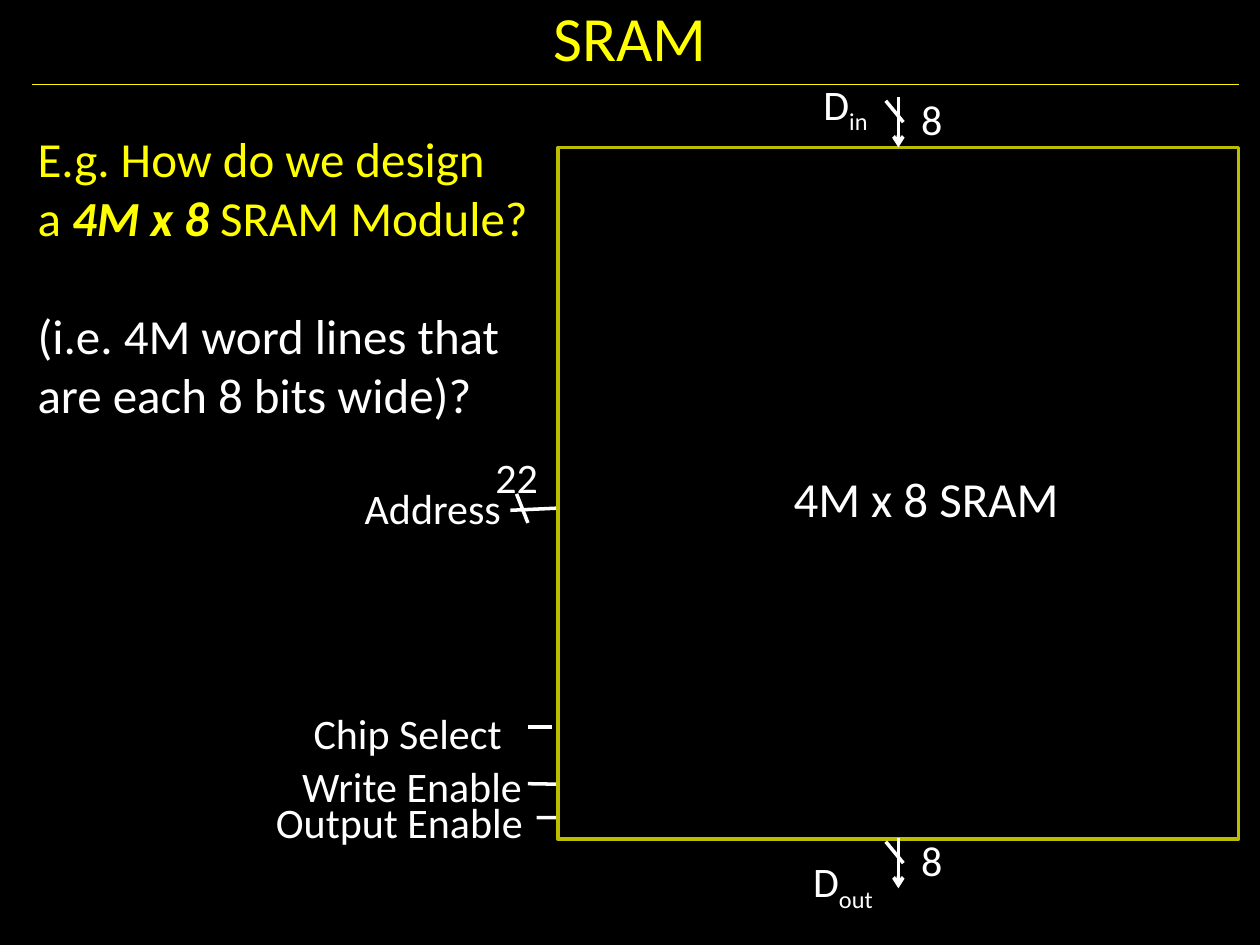
"""Build a slide showing the ports of a 4M x 8 SRAM module."""
from lxml.etree import SubElement
from pptx import Presentation
from pptx.dml.color import RGBColor
from pptx.enum.shapes import MSO_CONNECTOR as Connector, MSO_SHAPE as Shape
from pptx.enum.text import MSO_ANCHOR as Anchor, MSO_AUTO_SIZE as AutoSize, PP_ALIGN as Align
from pptx.oxml.ns import qn
from pptx.util import Inches, Pt

COLORS = {"background": "000000", "title": "FFFF00", "rule": "F9F900",
          "module": "BDBD00", "text": "FFFFFF"}
FONT = "Calibri"
TITLE = "SRAM"
MODULE_BOX = (4.43, 1.17, 5.4, 5.49)
MODULE_NAME = ("4M x 8 SRAM", (6.2, 3.67, 2.34, 0.57))
QUESTION_BOX = (0.2, 0.97, 4.14, 2.93)
QUESTION = [
    ("title", 0, [("E.g. How do we design", False)]),
    ("title", 0, [("a ", False), ("4M x 8", True), (" SRAM Module?", False)]),
    ("text", 34, [("(i.e. 4M word lines that", False)]),
    ("text", 0, [("are each 8 bits wide)?", False)]),
]
LABELS = [
    ("22", "", (3.83, 3.47, 0.54, 0.57)),
    ("Address", "", (2.79, 3.72, 1.29, 0.57)),
    ("D", "out", (6.33, 6.67, 0.72, 0.54)),
    ("D", "in", (6.42, 0.5, 0.58, 0.54)),
    ("Chip Select", "", (2.38, 5.5, 1.71, 0.54)),
    ("Write Enable", "", (2.29, 5.92, 1.96, 0.54)),
    ("Output Enable", "", (2.08, 6.21, 2.18, 0.57)),
]
INPUT_WIRES = [
    ((4.05, 4.05), (4.71, 4.02), "tailEnd"),
    ((4.1, 3.92), (4.19, 4.15), None),
    ((5.96, 6.25), (4.19, 6.22), None),
    ((6.34, 6.48), (4.26, 6.49), None),
    ((4.38, 5.77), (4.19, 5.77), None),
]
DATA_BUS_TOPS = (0.77, 6.65)
BUS_X = 7.13
BUS_WIDTH = "8"


def style(run, size, color="text", emphasis=None):
    font = run.font
    font.name, font.size = FONT, Pt(size)
    font.bold = font.italic = emphasis
    font.color.rgb = RGBColor.from_string(COLORS[color])


def add_line(slide, start, end, arrow=None, color="text", width=2):
    points = [Inches(value) for value in (*start, *end)]
    line = slide.shapes.add_connector(Connector.STRAIGHT, *points)
    line.line.color.rgb = RGBColor.from_string(COLORS[color])
    line.line.width = Pt(width)
    if arrow:
        SubElement(line.line._get_or_add_ln(), qn(f"a:{arrow}"), type="arrow")
    SubElement(line._element.spPr, qn("a:effectLst"))


def add_text_frame(slide, box):
    frame = slide.shapes.add_textbox(*map(Inches, box)).text_frame
    frame.word_wrap = False
    frame.auto_size = AutoSize.SHAPE_TO_FIT_TEXT
    return frame


def add_label(slide, text, subscript, box):
    paragraph = add_text_frame(slide, box).paragraphs[0]
    paragraph.alignment = Align.CENTER
    paragraph.line_spacing = 1.16
    paragraph.text = text
    if subscript:
        paragraph.add_run().text = subscript
    for run in paragraph.runs:
        style(run, 24)
    if subscript:
        paragraph.runs[-1].font._element.set("baseline", "-25000")


def add_title(slide):
    title = slide.shapes.title
    title.left, title.top, title.width, title.height = map(Inches, (0.25, 0, 9.5, 0.58))
    frame = title.text_frame
    frame.text = TITLE
    frame.vertical_anchor = Anchor.MIDDLE
    frame.paragraphs[0].alignment = Align.CENTER
    style(frame.paragraphs[0].runs[0], 36, "title")
    add_line(slide, (0.25, 0.67), (9.83, 0.67), color="rule", width=0.75)


def add_module(slide):
    module = slide.shapes.add_shape(Shape.RECTANGLE, *map(Inches, MODULE_BOX))
    module.shadow.inherit = False
    module.fill.solid()
    module.fill.fore_color.rgb = RGBColor.from_string(COLORS["background"])
    module.line.color.rgb = RGBColor.from_string(COLORS["module"])
    module.line.width = Pt(2)
    name, box = MODULE_NAME
    frame = add_text_frame(slide, box)
    frame.text = name
    style(frame.paragraphs[0].runs[0], 28)


def add_data_bus(slide, top):
    add_line(slide, (BUS_X, top + 0.4), (BUS_X, top), "headEnd")
    add_line(slide, (BUS_X - 0.1, top + 0.03), (BUS_X + 0.04, top + 0.2))
    add_label(slide, BUS_WIDTH, "", (BUS_X + 0.08, top - 0.14, 0.37, 0.57))


def add_question(slide):
    frame = add_text_frame(slide, QUESTION_BOX)
    for index, (color, gap, parts) in enumerate(QUESTION):
        paragraph = frame.add_paragraph() if index else frame.paragraphs[0]
        paragraph.space_before = Pt(gap)
        for text, emphasis in parts:
            run = paragraph.add_run()
            run.text = text
            style(run, 28, color, emphasis)


def main():
    presentation = Presentation()
    presentation.slide_width, presentation.slide_height = Inches(10), Inches(7.5)
    slide = presentation.slides.add_slide(presentation.slide_layouts[5])
    slide.background.fill.solid()
    slide.background.fill.fore_color.rgb = RGBColor.from_string(COLORS["background"])
    add_title(slide)
    for label in LABELS:
        add_label(slide, *label)
    for wire in INPUT_WIRES:
        add_line(slide, *wire)
    add_module(slide)
    for top in DATA_BUS_TOPS:
        add_data_bus(slide, top)
    add_question(slide)
    presentation.save("out.pptx")


if __name__ == "__main__":
    main()
